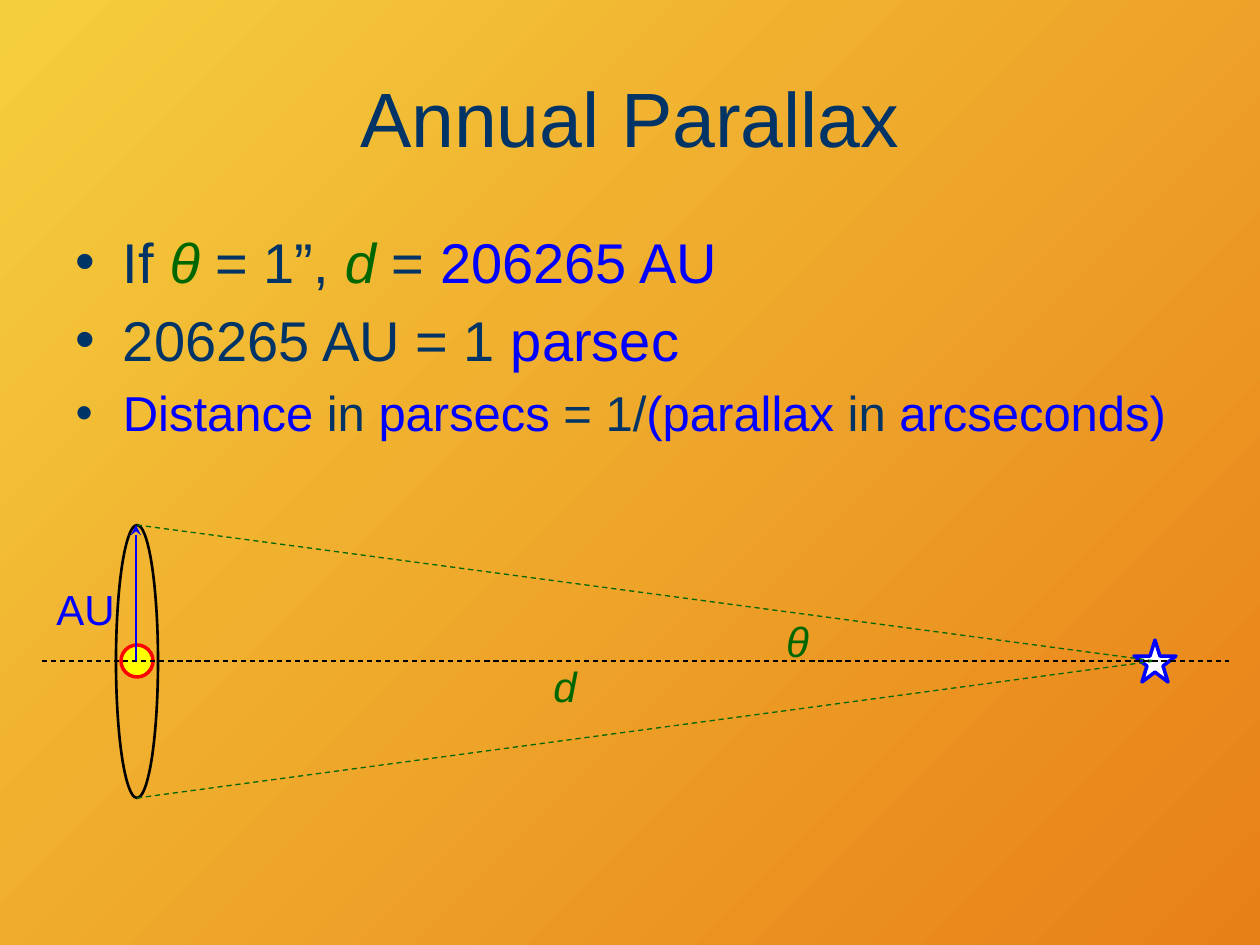
import pptx
import pptx.util
import pptx.dml.color
import pptx.enum.dml
import pptx.enum.shapes
import pptx.enum.text
import pptx.oxml.xmlchemy
import lxml.etree
from pptx.oxml.ns import qn

PX = 914400 / 126
COLORS = {"navy": "003366", "green": "006600", "blue": "0000FF", "black": "000000",
          "white": "FFFFFF", "yellow": "FFFF00", "red": "FF0000",
          "gold": "F5CE3D", "orange": "E88018"}


def px(*lengths):
    return [round(length * PX) for length in lengths]


def style_font(font, color, size, italic=False):
    font.name = "Arial"
    font.size = pptx.util.Pt(size)
    font.italic = italic
    font.color.rgb = pptx.dml.color.RGBColor.from_string(COLORS[color])


deck = pptx.Presentation()
deck.slide_width, deck.slide_height = px(1260, 945)
page = deck.slides.add_slide(deck.slide_layouts[1])

# Background gradient, from top left to bottom right
backdrop = page.background.fill
backdrop.gradient()
backdrop.gradient_angle = 315
for stop, color in zip(backdrop.gradient_stops, ("gold", "orange")):
    stop.color.rgb = pptx.dml.color.RGBColor.from_string(COLORS[color])

# Title
title = page.shapes.title
title.left, title.top, title.width, title.height = px(63, 38, 1134, 157)
title.text_frame.text = "Annual Parallax"
style_font(title.text_frame.paragraphs[0].font, "navy", 44)

# Bulleted list
body = page.placeholders[1]
body.left, body.top, body.width, body.height = px(63, 221, 1134, 242)
bullets = [
    (32, [("If ", "navy"), ("θ", "green"), (" = 1”, ", "navy"), ("d", "green"),
          (" = ", "navy"), ("206265 AU", "blue")]),
    (32, [("206265 AU = 1 ", "navy"), ("parsec", "blue")]),
    (28, [("Distance ", "blue"), ("in", "navy"), (" parsecs ", "blue"), ("= 1/", "navy"),
          ("(parallax ", "blue"), ("in", "navy"), (" arcseconds)", "blue")]),
]
body.text_frame.text = "\n" * (len(bullets) - 1)
for para, (size, spans) in zip(body.text_frame.paragraphs, bullets):
    bullet_color = lxml.etree.SubElement(para._p.get_or_add_pPr(), qn("a:buClr"))
    lxml.etree.SubElement(bullet_color, qn("a:srgbClr"), val=COLORS["navy"])
    for text, color in spans:
        span = para.add_run()
        span.text = text
        style_font(span.font, color, size, italic=color == "green")

# Sun, Earth's orbit and the star
kinds = pptx.enum.shapes.MSO_SHAPE
for kind, place, fill, line, weight in [
    (kinds.OVAL, (121, 645, 32, 32), "yellow", "red", 2),
    (kinds.OVAL, (116, 525, 42, 273), None, "black", 1.5),
    (kinds.STAR_5_POINT, (1134, 640, 42, 42), "white", "blue", 2),
]:
    body_in_space = page.shapes.add_shape(kind, *px(*place))
    body_in_space.shadow.inherit = False
    if fill:
        body_in_space.fill.solid()
        body_in_space.fill.fore_color.rgb = pptx.dml.color.RGBColor.from_string(COLORS[fill])
    else:
        body_in_space.fill.background()
    body_in_space.line.color.rgb = pptx.dml.color.RGBColor.from_string(COLORS[line])
    body_in_space.line.width = pptx.util.Pt(weight)

# Sight lines, axis and orbit radius
for ends, color, weight, dashed in [
    ((137, 525, 1155, 661), "green", 0.75, True),
    ((137, 798, 1155, 661), "green", 0.75, True),
    ((42, 661, 1229, 661), "black", 0.75, True),
    ((136, 661, 136, 525), "blue", 1.25, False),
]:
    ray = page.shapes.add_connector(pptx.enum.shapes.MSO_CONNECTOR.STRAIGHT, *px(*ends))
    ray.line.color.rgb = pptx.dml.color.RGBColor.from_string(COLORS[color])
    ray.line.width = pptx.util.Pt(weight)
    if dashed:
        ray.line.dash_style = pptx.enum.dml.MSO_LINE.DASH
    else:
        lxml.etree.SubElement(ray.line._get_or_add_ln(), qn("a:tailEnd"), type="stealth")
    lxml.etree.SubElement(ray._element.spPr, qn("a:effectLst"))

# Labels
aligns = pptx.enum.text.PP_ALIGN
for text, place, color, align, wrap in [
    ("θ", (766, 609, 63, 63), "green", aligns.CENTER, True),
    ("AU", (44, 577, 84, 63), "blue", aligns.LEFT, False),
    ("d", (541, 654, 49, 63), "green", aligns.LEFT, False),
]:
    label = page.shapes.add_textbox(*px(*place))
    label.text_frame.word_wrap = wrap
    label.text_frame.auto_size = pptx.enum.text.MSO_AUTO_SIZE.SHAPE_TO_FIT_TEXT
    label.text_frame.text = text
    para = label.text_frame.paragraphs[0]
    para.alignment = align
    style_font(para.font, color, 24, italic=color == "green")

deck.save("out.pptx")
